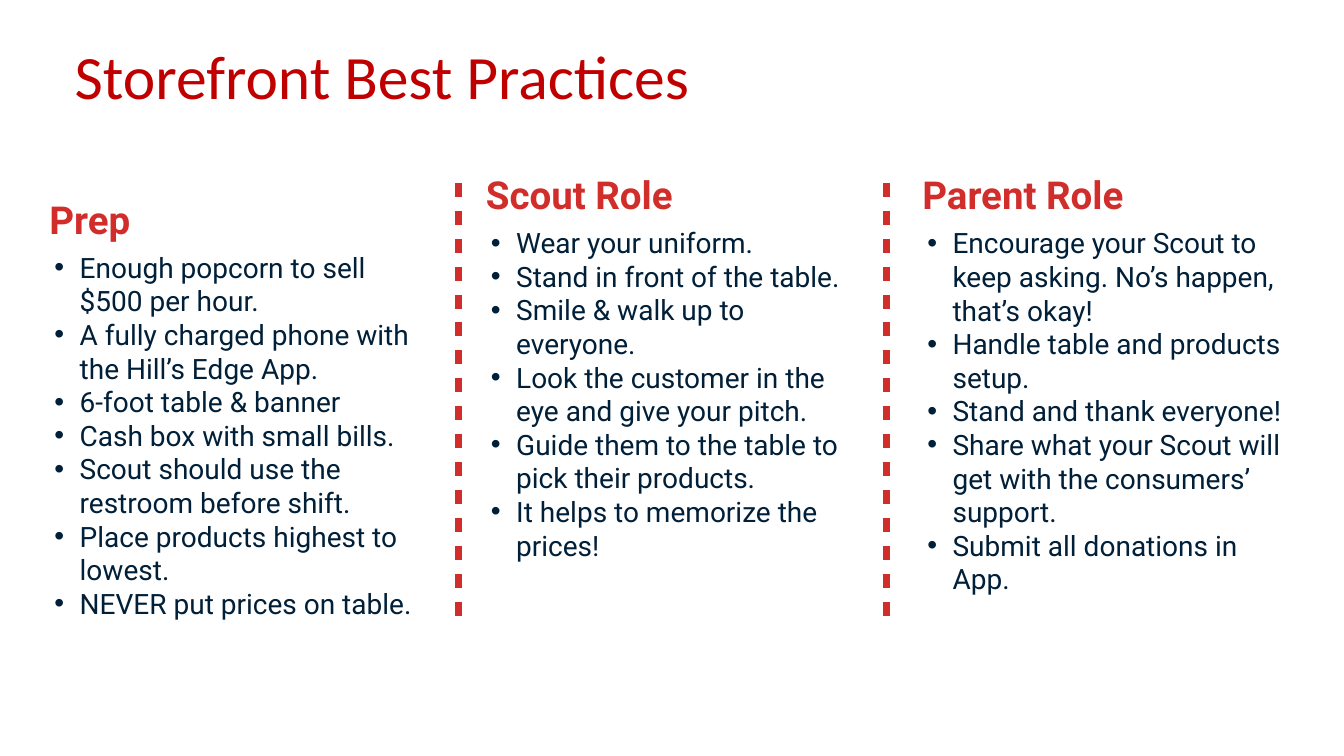
"""Builds the Storefront Best Practices slide with three role columns."""
from dataclasses import dataclass

from lxml import etree
from pptx import Presentation
from pptx.dml.color import RGBColor
from pptx.enum.shapes import MSO_CONNECTOR
from pptx.enum.text import MSO_ANCHOR, MSO_AUTO_SIZE, PP_ALIGN
from pptx.oxml.ns import qn
from pptx.util import Pt

STRAIGHT = MSO_CONNECTOR.STRAIGHT
MIDDLE = MSO_ANCHOR.MIDDLE
GROW = MSO_AUTO_SIZE.SHAPE_TO_FIT_TEXT
LEFT = PP_ALIGN.LEFT

TITLE = "Storefront Best Practices"
COLUMNS = [
    ("Prep", [
        "Enough popcorn to sell $500 per hour.",
        "A fully charged phone with the Hill’s Edge App.",
        "6-foot table & banner",
        "Cash box with small bills.",
        "Scout should use the restroom before shift.",
        "Place products highest to lowest.",
        "NEVER put prices on table.",
    ]),
    ("Scout Role", [
        "Wear your uniform.",
        "Stand in front of the table.",
        "Smile & walk up to everyone.",
        "Look the customer in the eye and give your pitch.",
        "Guide them to the table to pick their products.",
        "It helps to memorize the prices!",
    ]),
    ("Parent Role", [
        "Encourage your Scout to keep asking. No’s happen, that’s okay!",
        "Handle table and products setup.",
        "Stand and thank everyone!",
        "Share what your Scout will get with the consumers’ support.",
        "Submit all donations in App.",
    ]),
]


@dataclass(frozen=True)
class Theme:
    """Colours, fonts and type sizes."""
    title_color: RGBColor = RGBColor(0xC0, 0x00, 0x00)
    accent: RGBColor = RGBColor(0xD0, 0x2D, 0x2B)
    body_color: RGBColor = RGBColor(0x00, 0x1F, 0x38)
    title_font: str = "Calibri"
    body_font: str = "Roboto"
    title_size: float = 44
    heading_size: float = 27.5
    body_size: float = 20
    divider_width: float = 5


THEME = Theme()
TITLE_BOX = (51.1, 24.5, 668.9, 57.6)
COLUMN_WIDTH = 270
COLUMN_BOXES = [(33.1, 136.1, 310.3), (344.9, 131, 261.4), (656.6, 131, 285.8)]
COLUMN_PLACEHOLDERS = (1, 2, 4)
UNUSED_PLACEHOLDER = 3
DIVIDERS = (327.6, 632.9)
DIVIDER_TOP, DIVIDER_BOTTOM = 131, 439.9
INSET = 2.2
BULLET_MARGIN, BULLET_HANG = 21.6, 18


def place(shape, left, top, width, height):
    """Position a placeholder and return its prepared text frame."""
    shape.left, shape.top = Pt(left), Pt(top)
    shape.width, shape.height = Pt(width), Pt(height)
    frame = shape.text_frame
    frame.word_wrap = True
    frame.auto_size = GROW
    frame.vertical_anchor = MIDDLE
    frame.margin_left = frame.margin_right = Pt(INSET)
    frame.margin_top = frame.margin_bottom = Pt(INSET)
    return frame


def write(paragraph, text, font, size, color, bold=False, after=0, bullet=False):
    """Fill and format one paragraph."""
    paragraph.text = text
    paragraph.alignment = LEFT
    paragraph.line_spacing = 1.0
    paragraph.space_before = Pt(0)
    paragraph.space_after = Pt(after)
    properties = paragraph._p.get_or_add_pPr()
    properties.set("marL", str(Pt(BULLET_MARGIN) if bullet else 0))
    properties.set("indent", str(-Pt(BULLET_HANG) if bullet else 0))
    if bullet:
        etree.SubElement(properties, qn("a:buFont")).set("typeface", "Arial")
        etree.SubElement(properties, qn("a:buChar")).set("char", "•")
    else:
        etree.SubElement(properties, qn("a:buNone"))
    paragraph.font.name = font
    paragraph.font.size = Pt(size)
    paragraph.font.bold = bold
    paragraph.font.color.rgb = color


def add_column(shape, box, heading, items):
    """Write a heading and its bullet list into one placeholder."""
    left, top, height = box
    frame = place(shape, left, top, COLUMN_WIDTH, height)
    write(frame.paragraphs[0], heading, THEME.body_font, THEME.heading_size,
          THEME.accent, bold=True, after=6)
    for item in items:
        write(frame.add_paragraph(), item, THEME.body_font, THEME.body_size,
              THEME.body_color, bullet=True)


def add_divider(slide, x):
    """Draw a dashed vertical divider from bottom to top."""
    divider = slide.shapes.add_connector(
        STRAIGHT, Pt(x), Pt(DIVIDER_BOTTOM), Pt(x), Pt(DIVIDER_TOP))
    divider.line.color.rgb = THEME.accent
    divider.line.width = Pt(THEME.divider_width)
    dashes = etree.SubElement(divider.line._get_or_add_ln(), qn("a:custDash"))
    etree.SubElement(dashes, qn("a:ds"), d="200000", sp="200000")
    etree.SubElement(divider._element.spPr, qn("a:effectLst"))


def main():
    """Build and save the presentation."""
    presentation = Presentation()
    presentation.slide_width, presentation.slide_height = Pt(960), Pt(540)
    layout = presentation.slide_layouts.get_by_name("Comparison")
    slide = presentation.slides.add_slide(layout)
    title_frame = place(slide.shapes.title, *TITLE_BOX)
    write(title_frame.paragraphs[0], TITLE, THEME.title_font, THEME.title_size,
          THEME.title_color)
    placeholders = {shape.placeholder_format.idx: shape for shape in slide.placeholders}
    for index, box, (heading, items) in zip(COLUMN_PLACEHOLDERS, COLUMN_BOXES, COLUMNS):
        add_column(placeholders[index], box, heading, items)
    unused = placeholders[UNUSED_PLACEHOLDER]._element
    unused.getparent().remove(unused)
    for x in DIVIDERS:
        add_divider(slide, x)
    presentation.save("out.pptx")


if __name__ == "__main__":
    main()
